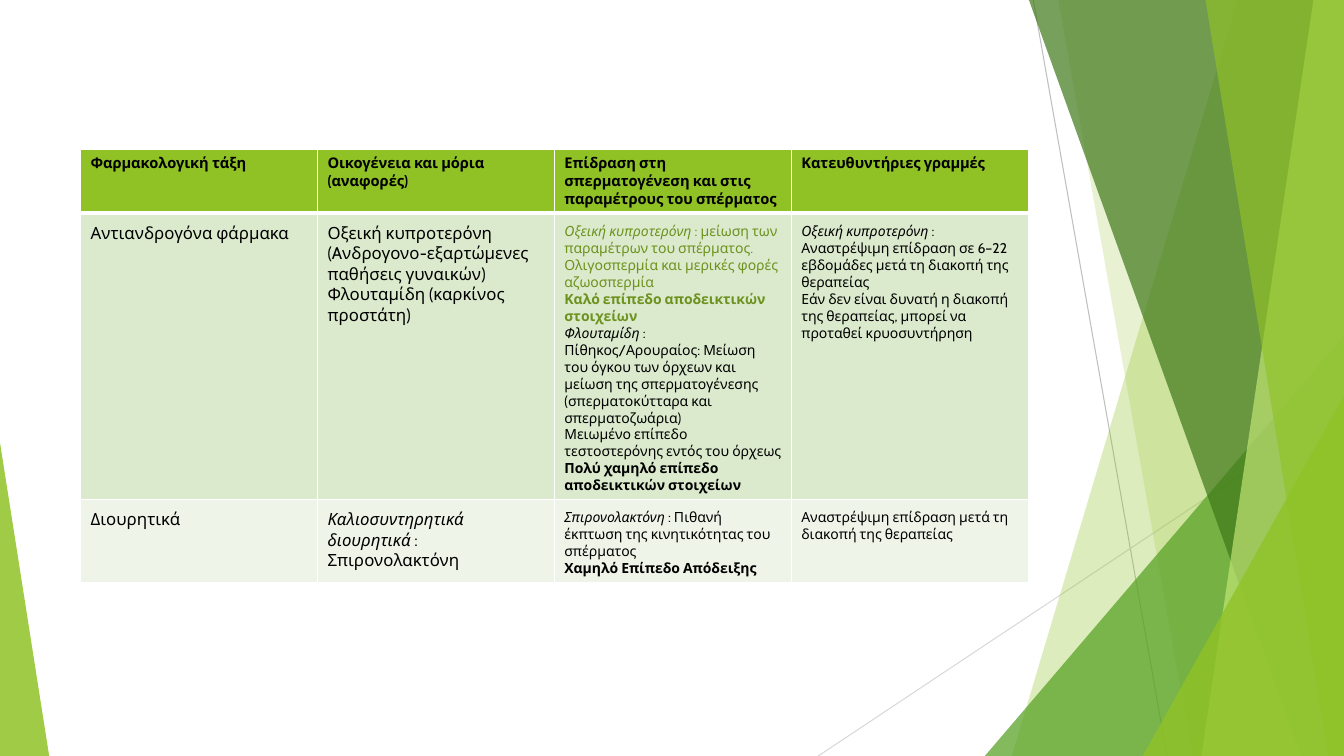
from dataclasses import dataclass

from lxml import etree
from pptx import Presentation
from pptx.dml.color import RGBColor
from pptx.enum.shapes import MSO_CONNECTOR, MSO_SHAPE
from pptx.oxml.ns import qn
from pptx.util import Cm, Pt

STRAIGHT = MSO_CONNECTOR.STRAIGHT
TRIANGLE = MSO_SHAPE.ISOSCELES_TRIANGLE
BLANK_LAYOUT = 6
WIDTH, HEIGHT = 33.87, 19.05


@dataclass(frozen=True)
class Theme:
    font: str = "Cabin"
    text: str = "000000"
    highlight: str = "6C921D"
    lime: str = "90C226"
    pale_lime: str = "C0E474"
    green: str = "54A021"
    forest: str = "3F7819"
    white: str = "FFFFFF"
    grey: str = "BFBFBF"
    light_grey: str = "D9D9D9"
    row_fills: tuple = ("90C226", "DBE9CD", "EEF4E8")
    header_size: float = 10.5
    column_sizes: tuple = (12, 12, 10, 10)
    hairline: float = 0.75
    border: float = 1
    header_border: float = 3


THEME = Theme()

HEADINGS = [
    "Φαρμακολογική τάξη",
    "Οικογένεια και μόρια (αναφορές)",
    "Επίδραση στη σπερματογένεση και στις παραμέτρους του σπέρματος",
    "Κατευθυντήριες γραμμές",
]
ANTIANDROGENS = [
    [[("Αντιανδρογόνα φάρμακα", "")]],
    [
        [("Οξεική κυπροτερόνη (Aνδρογονο-εξαρτώμενες παθήσεις γυναικών)", "")],
        [("Φλουταμίδη (καρκίνος προστάτη)", "")],
    ],
    [
        [
            ("Οξεική κυπροτερόνη", "ih"),
            (" : μείωση των παραμέτρων του σπέρματος. Ολιγοσπερμία και μερικές φορές αζωοσπερμία", "h"),
        ],
        [("Καλό επίπεδο αποδεικτικών στοιχείων", "bh")],
        [("Φλουταμίδη", "i"), (" :", "")],
        [(
            "Πίθηκος/Αρουραίος: Μείωση του όγκου των όρχεων και μείωση της "
            "σπερματογένεσης (σπερματοκύτταρα και σπερματοζωάρια)", "",
        )],
        [("Μειωμένο επίπεδο τεστοστερόνης εντός του όρχεως", "")],
        [("Πολύ χαμηλό επίπεδο αποδεικτικών στοιχείων", "b")],
    ],
    [
        [
            ("Οξεική κυπροτερόνη", "i"),
            (" : Αναστρέψιμη επίδραση σε 6–22 εβδομάδες μετά τη διακοπή της θεραπείας", ""),
        ],
        [("Εάν δεν είναι δυνατή η διακοπή της θεραπείας, μπορεί να προταθεί κρυοσυντήρηση", "")],
    ],
]
DIURETICS = [
    [[("Διουρητικά", "")]],
    [[("Καλιοσυντηρητικά διουρητικά", "i"), (" : Σπιρονολακτόνη", "")]],
    [
        [("Σπιρονολακτόνη", "i"), (" : Πιθανή έκπτωση της κινητικότητας του σπέρματος", "")],
        [("Χαμηλό Επίπεδο Απόδειξης", "b")],
    ],
    [[("Αναστρέψιμη επίδραση μετά τη διακοπή της θεραπείας", "")]],
]
DRUG_ROWS = [[[[(heading, "b")]] for heading in HEADINGS], ANTIANDROGENS, DIURETICS]
ROW_HEIGHTS = [1.57, 7.2, 2.05]
COLUMN_WIDTH = 5.97


class SlideBuilder:
    def __init__(self, slide, theme):
        self.shapes = slide.shapes
        self.theme = theme

    def line(self, start, end, color):
        edge = self.shapes.add_connector(STRAIGHT, *map(Cm, (*start, *end)))
        edge.line.color.rgb = RGBColor.from_string(color)
        edge.line.width = Pt(self.theme.hairline)
        etree.SubElement(edge.element.spPr, qn("a:effectLst"))

    def paint(self, facet, color, opacity):
        facet.shadow.inherit = False
        facet.line.fill.background()
        facet.fill.solid()
        facet.fill.fore_color.rgb = RGBColor.from_string(color)
        tint = facet.element.spPr.find(qn("a:solidFill")).find(qn("a:srgbClr"))
        etree.SubElement(tint, qn("a:alpha"), val=str(opacity * 1000))

    def panel(self, top_x, bottom_x, color, opacity):
        outline = self.shapes.build_freeform(Cm(top_x), 0)
        corners = [(WIDTH, 0), (WIDTH, HEIGHT), (bottom_x, HEIGHT)]
        outline.add_line_segments([(Cm(x), Cm(y)) for x, y in corners], close=True)
        self.paint(outline.convert_to_shape(), color, opacity)

    def triangle(self, left, top, width, apex, color, opacity):
        facet = self.shapes.add_shape(TRIANGLE, *map(Cm, (left, top, width, HEIGHT - top)))
        facet.adjustments[0] = apex
        self.paint(facet, color, opacity)

    def table(self, left, top, rows, heights, column_width):
        columns = len(rows[0])
        grid = self.shapes.add_table(
            len(rows), columns, Cm(left), Cm(top), Cm(column_width * columns), Cm(sum(heights))
        ).table
        grid.horz_banding = False
        for column in grid.columns:
            column.width = Cm(column_width)
        for r, (contents, height) in enumerate(zip(rows, heights)):
            grid.rows[r].height = Cm(height)
            for c, paragraphs in enumerate(contents):
                self.cell(grid.cell(r, c), r, c, paragraphs)

    def cell(self, cell, r, c, paragraphs):
        theme = self.theme
        if r > 0:
            cell.margin_top = Cm(0.25)
        thick, thin = theme.header_border, theme.border
        self.borders(cell, {
            "L": thin,
            "R": thin,
            "T": thick if r == 1 else thin,
            "B": thick if r == 0 else thin,
        })
        cell.fill.solid()
        cell.fill.fore_color.rgb = RGBColor.from_string(theme.row_fills[r])
        size = theme.column_sizes[c] if r else theme.header_size
        for index, runs in enumerate(paragraphs):
            frame = cell.text_frame
            paragraph = frame.add_paragraph() if index else frame.paragraphs[0]
            for text, marks in runs:
                self.run(paragraph, text, marks, size)

    def borders(self, cell, widths):
        properties = cell._tc.get_or_add_tcPr()
        for side, width in widths.items():
            border = etree.SubElement(properties, qn(f"a:ln{side}"), w=str(Pt(width)))
            fill = etree.SubElement(border, qn("a:solidFill"))
            etree.SubElement(fill, qn("a:srgbClr"), val=self.theme.white)

    def run(self, paragraph, text, marks, size):
        run = paragraph.add_run()
        run.text = text
        run.font.name = self.theme.font
        run.font.size = Pt(size)
        run.font.bold = "b" in marks
        run.font.italic = "i" in marks
        color = self.theme.highlight if "h" in marks else self.theme.text
        run.font.color.rgb = RGBColor.from_string(color)


def main():
    deck = Presentation()
    deck.slide_width, deck.slide_height = Cm(WIDTH), Cm(HEIGHT)
    slide = deck.slides.add_slide(deck.slide_layouts[BLANK_LAYOUT])
    builder = SlideBuilder(slide, THEME)

    builder.line((26.04, 0), (29.41, HEIGHT), THEME.grey)
    builder.line((WIDTH, 10.24), (20.62, HEIGHT), THEME.light_grey)
    builder.panel(31.19, 25.5, THEME.lime, 30)
    builder.panel(26.67, 30.05, THEME.lime, 20)
    builder.triangle(24.82, 8.46, 9.05, 1, THEME.green, 72)
    builder.panel(25.93, 32.79, THEME.forest, 70)
    builder.panel(33.1, 30.28, THEME.pale_lime, 70)
    builder.panel(30.38, 33.48, THEME.lime, 65)
    builder.triangle(28.8, 9.98, 5.07, 1, THEME.lime, 80)
    builder.triangle(0, 11.15, 1.24, 0, THEME.lime, 85)
    builder.table(2.03, 3.76, DRUG_ROWS, ROW_HEIGHTS, COLUMN_WIDTH)

    deck.save("out.pptx")


if __name__ == "__main__":
    main()
